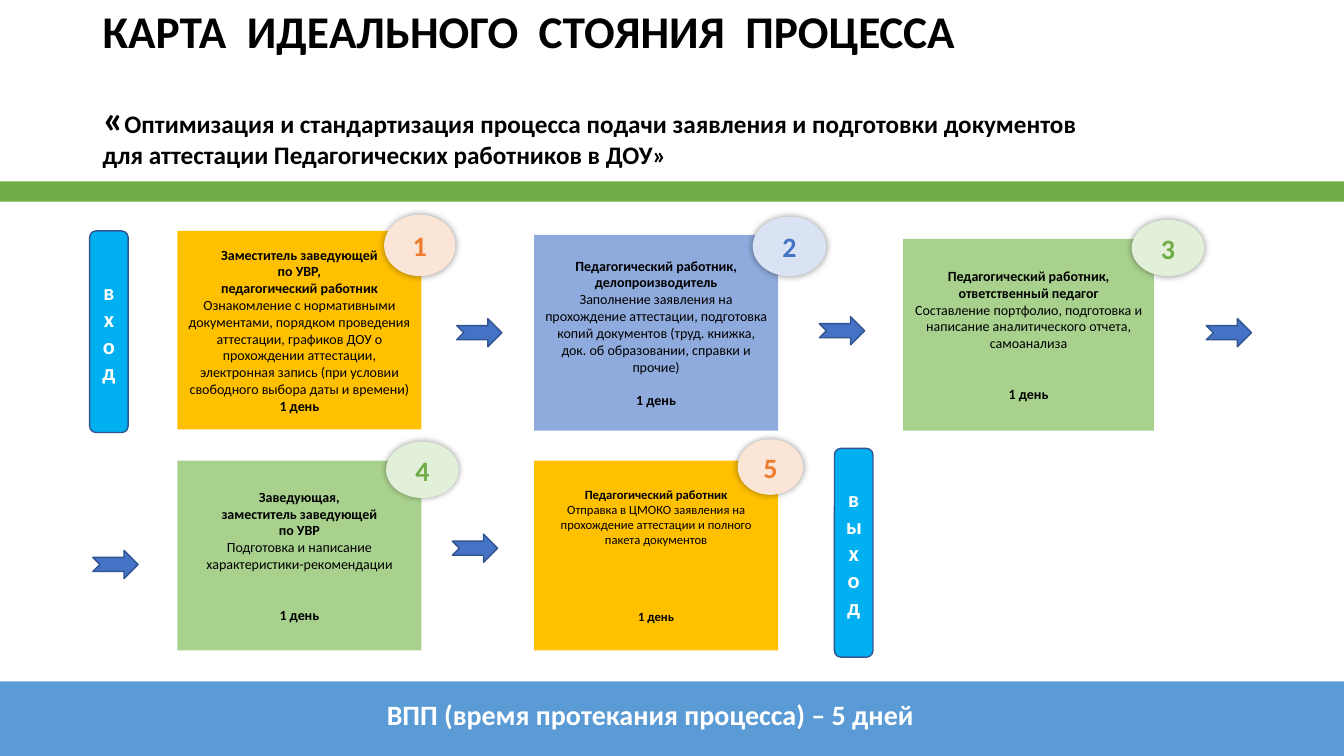
from dataclasses import dataclass

from lxml.etree import SubElement
from pptx import Presentation
from pptx.dml.color import RGBColor
from pptx.enum.shapes import MSO_SHAPE
from pptx.enum.text import MSO_ANCHOR, PP_ALIGN
from pptx.oxml.ns import qn
from pptx.util import Cm, Pt


@dataclass(frozen=True)
class Theme:
    font: str = "Calibri"
    black: str = "000000"
    white: str = "FFFFFF"
    green: str = "70AD47"
    blue: str = "4472C4"
    orange: str = "ED7D31"
    footer: str = "5B9BD5"
    outline: str = "325491"
    gate: str = "00B0F0"
    card_gold: str = "FFC000"
    card_blue: str = "8FAADC"
    card_green: str = "A9D18E"
    pale_orange: str = "FBE5D6"
    pale_blue: str = "DAE3F3"
    pale_green: str = "E2F0D9"
    title_size: float = 32.4
    quote_size: float = 28.8
    subtitle_size: float = 18
    number_size: float = 20
    gate_size: float = 16
    card_size: float = 10
    small_card_size: float = 9


class ProcessMap:
    def __init__(self, slide, theme):
        self.s = slide
        self.t = theme

    def run(self, p, text, size, color, bold=True):
        r = p.add_run()
        r.text = text
        fmt = {"name": self.t.font, "size": Pt(size), "bold": bold}
        for key, value in fmt.items():
            setattr(r.font, key, value)
        r.font.color.rgb = RGBColor.from_string(color)

    def frame(self, sp, **fmt):
        tf = sp.text_frame
        for key, value in {"word_wrap": True, **fmt}.items():
            setattr(tf, key, value)
        return tf

    def shape(self, kind, box, fill, line=None):
        sp = self.s.shapes.add_shape(kind, *map(Cm, box))
        sp.shadow.inherit = False
        sp.fill.solid()
        sp.fill.fore_color.rgb = RGBColor.from_string(fill)
        if line:
            sp.line.color.rgb = RGBColor.from_string(line)
            sp.line.width = Pt(1)
        else:
            sp.line.fill.background()
        return sp

    def bar(self, top, height, fill):
        self.shape(MSO_SHAPE.RECTANGLE, (0, top, 33.87, height), fill)

    def label(self, sp, text, size, color, **fmt):
        tf = self.frame(sp, vertical_anchor=MSO_ANCHOR.MIDDLE, **fmt)
        p = tf.paragraphs[0]
        p.alignment = PP_ALIGN.CENTER
        self.run(p, text, size, color)

    def heading(self, box, title, subtitle):
        sp = self.s.shapes.add_textbox(*map(Cm, box))
        tf = self.frame(sp, margin_top=0, margin_bottom=0)
        p = tf.paragraphs[0]
        p.line_spacing = 0.9
        self.run(p, title, self.t.title_size, self.t.black)
        p = tf.add_paragraph()
        p.line_spacing = 0.9
        p.space_before = Pt(29)
        self.run(p, "«", self.t.quote_size, self.t.black)
        first, second = subtitle
        self.run(p, first, self.t.subtitle_size, self.t.black)
        p.add_line_break()
        self.run(p, second, self.t.subtitle_size, self.t.black)

    def card(self, box, fill, who, task, gap, size):
        sp = self.shape(MSO_SHAPE.RECTANGLE, box, fill)
        tf = self.frame(sp, vertical_anchor=MSO_ANCHOR.MIDDLE)
        lines = [(text, True) for text in who] + [(task, False), ("1 день", True)]
        for i, (text, bold) in enumerate(lines):
            p = tf.add_paragraph() if i else tf.paragraphs[0]
            p.alignment = PP_ALIGN.CENTER
            self.run(p, text, size, self.t.black, bold)
        p.space_before = Pt(gap)

    def badge(self, box, number, fill, color):
        sp = self.shape(MSO_SHAPE.OVAL, box, fill)
        effects = sp._element.spPr.find(qn("a:effectLst"))
        glow = SubElement(effects, qn("a:outerShdw"), blurRad=str(Pt(5)), dist="0", dir="0")
        clr = SubElement(glow, qn("a:srgbClr"), val=self.t.black)
        SubElement(clr, qn("a:alpha"), val="40000")
        self.label(sp, str(number), self.t.number_size, color, margin_left=0,
                   margin_right=0, margin_top=0, margin_bottom=0)

    def gate(self, box, text):
        sp = self.shape(MSO_SHAPE.ROUNDED_RECTANGLE, box, self.t.gate, self.t.outline)
        self.label(sp, text, self.t.gate_size, self.t.white)

    def arrow(self, left, top):
        self.shape(MSO_SHAPE.NOTCHED_RIGHT_ARROW, (left, top, 1.14, 0.71),
                   self.t.blue, self.t.outline)

    def caption(self, box, text):
        sp = self.s.shapes.add_textbox(*map(Cm, box))
        self.label(sp, text, self.t.number_size, self.t.white)


def main():
    prs = Presentation()
    prs.slide_width, prs.slide_height = Cm(33.87), Cm(19.05)
    t = Theme()
    m = ProcessMap(prs.slides.add_slide(prs.slide_layouts[6]), t)

    # Bars and heading
    m.bar(17.17, 1.88, t.footer)
    m.bar(4.57, 0.51, t.green)
    m.heading((2.34, 0.24, 29.2, 4.2), "КАРТА  ИДЕАЛЬНОГО  СТОЯНИЯ  ПРОЦЕССА",
              ("Оптимизация и стандартизация процесса подачи заявления и подготовки документов",
               "для аттестации Педагогических работников в ДОУ»"))

    # Steps: card box, badge box, colours, who, task, gap above the duration, size
    gold = (t.card_gold, t.pale_orange, t.orange)
    blue = (t.card_blue, t.pale_blue, t.blue)
    green = (t.card_green, t.pale_green, t.green)
    steps = [
        ((4.47, 5.82, 6.15, 5), (9.68, 5.41, 1.8, 1.55), gold,
         ["Заместитель заведующей", "по УВР,", "педагогический работник"],
         "Ознакомление с нормативными документами, порядком проведения аттестации, "
         "графиков ДОУ о прохождении аттестации, электронная запись "
         "(при условии свободного выбора даты и времени)", 0, t.card_size),
        ((13.46, 5.92, 6.15, 4.93), (18.97, 5.46, 1.85, 1.5), blue,
         ["Педагогический работник, делопроизводитель"],
         "Заполнение заявления на прохождение аттестации, подготовка копий документов "
         "(труд. книжка, док. об образовании, справки и прочие)", 12, t.card_size),
        ((22.76, 6.02, 6.32, 4.83), (28.52, 5.54, 1.83, 1.42), green,
         ["Педагогический работник, ответственный педагог"],
         "Составление портфолио, подготовка и написание аналитического отчета, "
         "самоанализа", 24, t.card_size),
        ((4.47, 11.61, 6.15, 4.78), (9.73, 11.13, 1.83, 1.42), green,
         ["Заведующая,", "заместитель заведующей", "по УВР"],
         "Подготовка и написание характеристики-рекомендации", 24, t.card_size),
        ((13.46, 11.61, 6.15, 4.78), (18.59, 11.07, 1.65, 1.4), gold,
         ["Педагогический работник"],
         "Отправка в ЦМОКО заявления на прохождение аттестации и полного пакета документов",
         44, t.small_card_size),
    ]
    for number, (box, badge_box, colors, who, task, gap, size) in enumerate(steps, 1):
        fill, pale, accent = colors
        m.card(box, fill, who, task, gap, size)
        m.badge(badge_box, number, pale, accent)

    # Entry, exit and flow arrows
    m.gate((2.26, 5.82, 0.97, 5.08), "вход")
    m.gate((21.03, 11.3, 0.97, 5.26), "выход")
    for left, top in [(11.51, 8.03), (20.65, 7.98), (30.4, 8.03), (2.34, 13.87), (11.4, 13.46)]:
        m.arrow(left, top)

    # Total time
    m.caption((7.26, 17.45, 18.26, 1.12), "ВПП (время протекания процесса) – 5 дней")

    prs.save("out.pptx")


if __name__ == "__main__":
    main()
